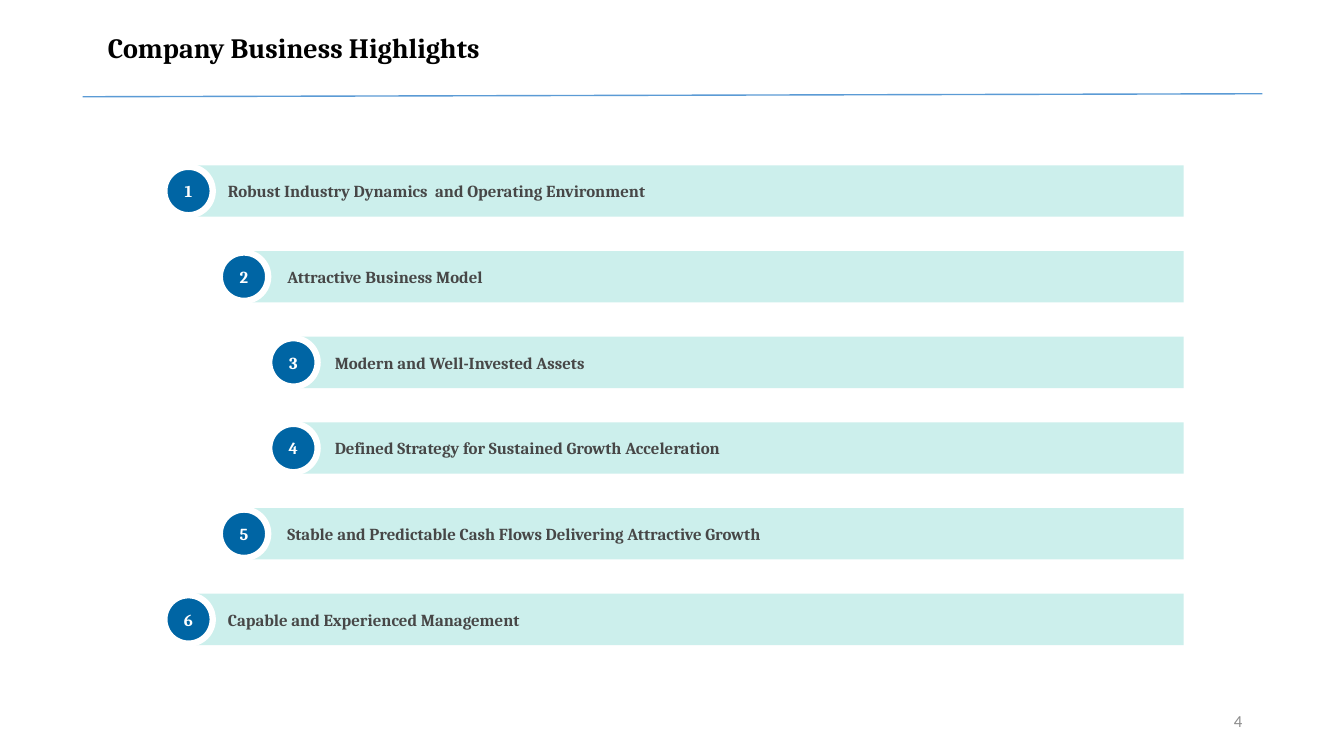
from dataclasses import dataclass

from lxml import etree
from pptx import Presentation
from pptx.dml.color import RGBColor
from pptx.enum.shapes import MSO_CONNECTOR, MSO_SHAPE
from pptx.enum.text import MSO_ANCHOR, PP_ALIGN
from pptx.oxml.ns import qn
from pptx.util import Inches, Pt

STRAIGHT = MSO_CONNECTOR.STRAIGHT
RECTANGLE, OVAL = MSO_SHAPE.RECTANGLE, MSO_SHAPE.OVAL
TOP, MIDDLE = MSO_ANCHOR.TOP, MSO_ANCHOR.MIDDLE
LEFT, CENTER, RIGHT = PP_ALIGN.LEFT, PP_ALIGN.CENTER, PP_ALIGN.RIGHT


@dataclass(frozen=True)
class Theme:
    heading_font: str = "Cambria"
    number_font: str = "Calibri"
    title_size: float = 20
    body_size: float = 12
    title: str = "000000"
    body: str = "474747"
    page: str = "8C8C8C"
    bar: str = "CCEFEC"
    badge: str = "0065A4"
    white: str = "FFFFFF"
    rule: str = "5B9BD5"


@dataclass(frozen=True)
class Highlight:
    text: str
    bar_left: float
    badge_left: float


THEME = Theme()
OUTER, MIDWAY, INNER = (1.86, 1.63), (2.45, 2.18), (2.92, 2.67)
HIGHLIGHTS = [
    Highlight("Robust Industry Dynamics  and Operating Environment", *OUTER),
    Highlight("Attractive Business Model", *MIDWAY),
    Highlight("Modern and Well-Invested Assets", *INNER),
    Highlight("Defined Strategy for Sustained Growth Acceleration", *INNER),
    Highlight("Stable and Predictable Cash Flows Delivering Attractive Growth", *MIDWAY),
    Highlight("Capable and Experienced Management", *OUTER),
]
FIRST_TOP, PITCH = 1.64, 0.85
BAR_RIGHT, BAR_HEIGHT, BADGE_SIZE = 11.74, 0.51, 0.48


def rgb(color: str) -> RGBColor:
    return RGBColor.from_string(color)


def write_text(sp, text: str, *, color: str, size: float = THEME.body_size,
               font: str = THEME.heading_font, bold: bool = True, align=LEFT,
               anchor=MIDDLE, insets=(0.1, 0.05, 0.1, 0.05), wrap: bool = True) -> None:
    tf = sp.text_frame
    tf.word_wrap = wrap
    tf.vertical_anchor = anchor
    tf.margin_left, tf.margin_top, tf.margin_right, tf.margin_bottom = map(Inches, insets)
    p = tf.paragraphs[0]
    p.alignment = align
    r = p.add_run()
    r.text = text
    r.font.name = font
    r.font.size = Pt(size)
    r.font.bold = bold
    r.font.color.rgb = rgb(color)


def add_box(shapes, kind, left: float, top: float, width: float, height: float, fill: str):
    sp = shapes.add_shape(kind, Inches(left), Inches(top), Inches(width), Inches(height))
    sp.shadow.inherit = False
    sp.fill.solid()
    sp.fill.fore_color.rgb = rgb(fill)
    sp.line.fill.background()
    return sp


def add_highlight(s, number: int, item: Highlight) -> None:
    shapes = s.shapes.add_group_shape().shapes
    top = FIRST_TOP + (number - 1) * PITCH
    bar = add_box(shapes, RECTANGLE, item.bar_left, top,
                  BAR_RIGHT - item.bar_left, BAR_HEIGHT, THEME.bar)
    write_text(bar, item.text, color=THEME.body, insets=(0.4, 0.1, 0.1, 0.1))

    badge_top = top + (BAR_HEIGHT - BADGE_SIZE) / 2
    badge = add_box(shapes, OVAL, item.badge_left, badge_top,
                    BADGE_SIZE, BADGE_SIZE, THEME.badge)
    badge.line.color.rgb = rgb(THEME.white)
    badge.line.width = Pt(4.5)
    write_text(badge, str(number), color=THEME.white, align=CENTER,
               insets=(0, 0, 0, 0), wrap=False)


def add_rule(s) -> None:
    rule = s.shapes.add_connector(STRAIGHT, Inches(0.82), Inches(0.96),
                                  Inches(12.52), Inches(0.93))
    rule.line.color.rgb = rgb(THEME.rule)
    rule.line.width = Pt(1)
    etree.SubElement(rule._element.spPr, qn("a:effectLst"))


def main() -> None:
    prs = Presentation()
    prs.slide_width, prs.slide_height = Inches(13.33), Inches(7.5)
    s = prs.slides.add_slide(prs.slide_layouts[6])

    add_rule(s)
    page = s.shapes.add_textbox(Inches(9.42), Inches(6.95), Inches(3), Inches(0.4))
    write_text(page, "4", color=THEME.page, font=THEME.number_font, bold=False, align=RIGHT)
    title = s.shapes.add_textbox(Inches(0.87), Inches(0.3), Inches(5.71), Inches(0.34))
    write_text(title, "Company Business Highlights", color=THEME.title,
               size=THEME.title_size, anchor=TOP, insets=(0.2, 0, 0, 0))

    for number, item in enumerate(HIGHLIGHTS, start=1):
        add_highlight(s, number, item)

    prs.save("out.pptx")


if __name__ == "__main__":
    main()
